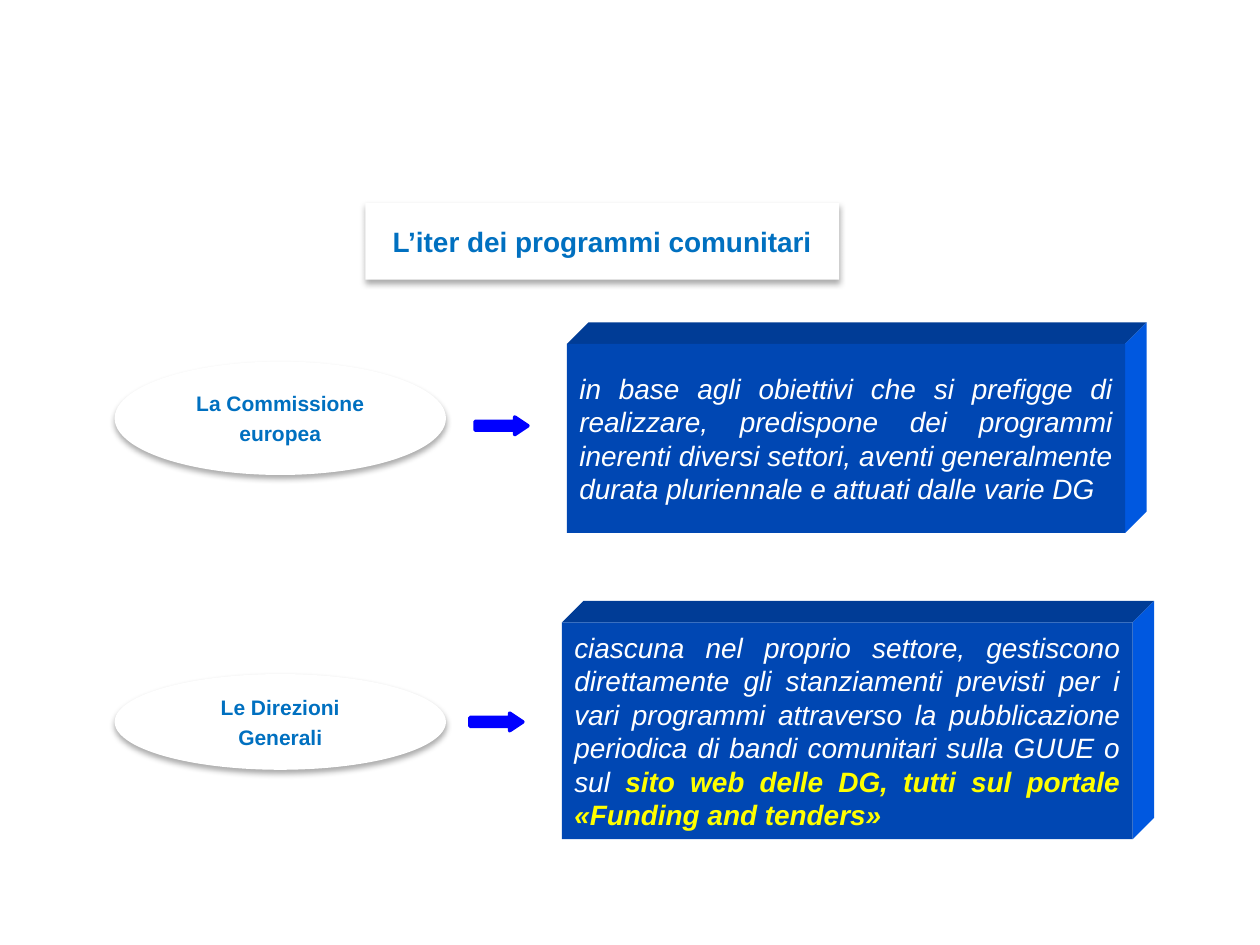
from lxml import etree
from pptx import Presentation
from pptx import util as u
from pptx.dml.color import RGBColor
from pptx.enum import shapes, text
from pptx.oxml import ns

KIND = shapes.MSO_SHAPE
BLUE, WHITE, GOLD = "0070C0", "FFFFFF", "FFFF00"
FRONT, TOP, SIDE = "0047B3", "003C96", "0058E0"
DEPTH = 0.17


def inch(box):
    """Turn a box of numbers into lengths."""
    return [u.Inches(v) for v in box]


def paint(shape, fill, line=None):
    """Set a flat fill and an optional outline, without shadow."""
    shape.shadow.inherit = False
    shape.fill.solid()
    shape.fill.fore_color.rgb = RGBColor.from_string(fill)
    if line:
        shape.line.color.rgb = RGBColor.from_string(line)
        shape.line.width = u.Pt(2)
    else:
        shape.line.fill.background()


def shade(shape):
    """Give a shape a soft shadow below it."""
    list_ = shape._element.spPr.find(ns.qn("a:effectLst"))
    cast = etree.SubElement(list_, ns.qn("a:outerShdw"), blurRad=str(u.Pt(3.5)),
                            dist=str(u.Pt(2.2)), dir="5400000", rotWithShape="0")
    tint = etree.SubElement(cast, ns.qn("a:srgbClr"), val="000000")
    etree.SubElement(tint, ns.qn("a:alpha"), val="32000")


def write(shape, paras, size, align):
    """Write paragraphs of (words, colour, bold, italic) runs."""
    frame = shape.text_frame
    frame.word_wrap = True
    frame.auto_size = text.MSO_AUTO_SIZE.NONE
    frame.vertical_anchor = text.MSO_ANCHOR.MIDDLE
    for i, runs in enumerate(paras):
        para = frame.add_paragraph() if i else frame.paragraphs[0]
        para.alignment = align
        para.space_before = u.Pt(3 if i else 0)
        for words, tint, bold, slant in runs:
            run = para.add_run()
            run.text = words
            font = run.font
            font.name, font.size = "Arial", u.Pt(size)
            font.bold, font.italic = bold, slant
            font.color.rgb = RGBColor.from_string(tint)


def label(shape, lines, size):
    """Style a white raised label with bold blue lines."""
    paint(shape, WHITE)
    shade(shape)
    write(shape, [[(line, BLUE, True, False)] for line in lines],
          size, text.PP_ALIGN.CENTER)


def head(slide, box, words):
    """Place the title in its box."""
    title = slide.shapes.title
    title.left, title.top, title.width, title.height = inch(box)
    label(title, [words], 16)


def face(slide, points, fill):
    """Draw one slanted face of a block."""
    points = [inch(p) for p in points]
    form = slide.shapes.build_freeform(*points[0])
    form.add_line_segments(points[1:], close=True)
    paint(form.convert_to_shape(), fill)


def block(slide, box, runs):
    """Draw a raised block whose front fills the box."""
    x, y, w, h = box
    r, b, d = x + w, y + h, DEPTH
    face(slide, [(x, y), (x + d, y - d), (r + d, y - d), (r, y)], TOP)
    face(slide, [(r, y), (r + d, y - d), (r + d, b - d), (r, b)], SIDE)
    front = slide.shapes.add_shape(KIND.RECTANGLE, *inch(box))
    paint(front, FRONT)
    write(front, [runs], 16, text.PP_ALIGN.JUSTIFY)


def oval(slide, box, lines):
    """Draw an oval naming who acts."""
    label(slide.shapes.add_shape(KIND.OVAL, *inch(box)), lines, 12)


def arrow(slide, box):
    """Draw a blue arrow pointing right."""
    shape = slide.shapes.add_shape(KIND.RIGHT_ARROW, *inch(box))
    shape.adjustments[0], shape.adjustments[1] = 0.5, 0.75
    paint(shape, "0000FF", "0000FF")


def main():
    """Build the slide and save it."""
    deck = Presentation()
    deck.slide_width, deck.slide_height = u.Inches(10), u.Inches(7.5)
    slide = deck.slides.add_slide(deck.slide_layouts[5])
    head(slide, (2.9, 1.61, 3.76, 0.61), "L’iter dei programmi comunitari")
    steps = [
        ((0.91, 2.87, 2.63, 0.9), ["La Commissione", "europea"],
         (3.77, 3.31, 0.42, 0.14), (4.5, 2.73, 4.43, 1.5),
         [("in base agli obiettivi che si prefigge di realizzare, predispone "
           "dei programmi inerenti diversi settori, aventi generalmente "
           "durata pluriennale e attuati dalle varie DG", WHITE, False, True)]),
        ((0.91, 5.35, 2.63, 0.76), ["Le Direzioni", "Generali"],
         (3.73, 5.66, 0.42, 0.14), (4.46, 4.94, 4.53, 1.72),
         [("ciascuna nel proprio settore, gestiscono direttamente gli "
           "stanziamenti previsti per i vari programmi attraverso la "
           "pubblicazione periodica di bandi comunitari sulla GUUE o sul ",
           WHITE, False, True),
          ("sito web delle DG, tutti sul portale «Funding and tenders»",
           GOLD, True, True)]),
    ]
    for who, lines, link, box, runs in steps:
        oval(slide, who, lines)
        arrow(slide, link)
        block(slide, box, runs)
    deck.save("out.pptx")


if __name__ == "__main__":
    main()
